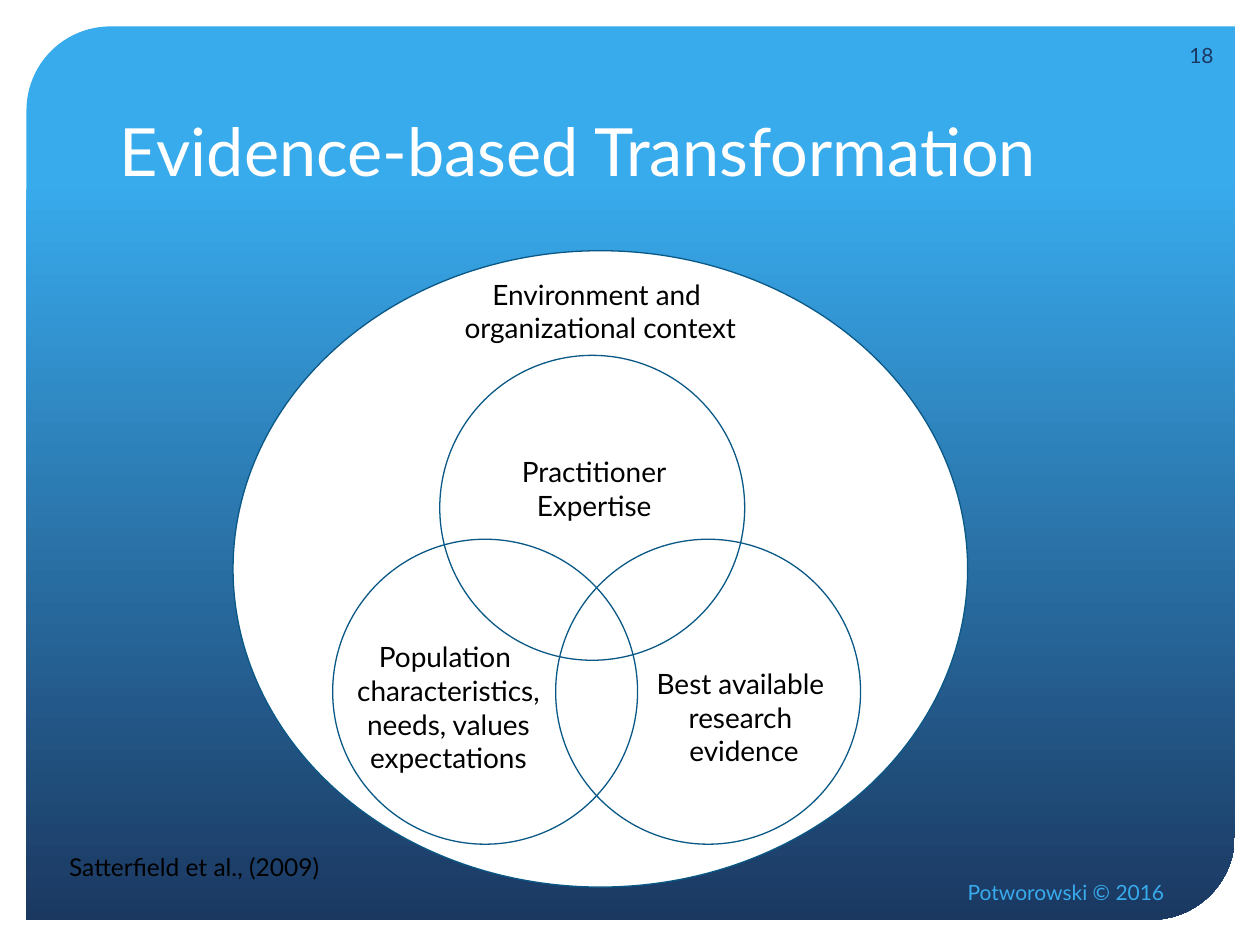
from pptx import Presentation
from pptx.dml.color import RGBColor
from pptx.enum import shapes, text
from pptx.util import Inches, Pt

THEME = {
    "font": "Lato",
    "sky": "38ABED", "navy": "1B3861", "outline": "095886",
    "white": "FFFFFF", "black": "000000",
    "title": 38, "label": 16, "source": 14, "small": 12, "line": 0.75,
}

TITLE = ("Evidence-based Transformation", (0.85, 0.42, 8.29, 1.14))
PANEL = (0.21, 0.21, 9.59, 7.09)
CONTEXT = (1.85, 1.99, 5.83, 5.05)
CIRCLE_SIZE = 2.42
CIRCLES = [(3.49, 2.82), (2.64, 4.28), (4.41, 4.28)]
LABELS = [
    ("Environment and \norganizational context", (3.53, 2.15, 2.47, 0.64)),
    ("Practitioner\vExpertise", (4.02, 3.56, 1.39, 0.64)),
    ("Population \ncharacteristics,\vneeds, values\nexpectations", (2.68, 5.03, 1.76, 1.18)),
    ("Best available \nresearch \nevidence", (5.1, 5.24, 1.61, 0.91)),
]
SOURCE = ("Satterfield et al., (2009)", (0.45, 6.71, 2.37, 0.34))
FOOTERS = [
    ("Potworowski © 2016", (3.61, 6.88, 5.73, 0.4), "sky"),
    ("18", (9.19, 0.24, 0.54, 0.4), "navy"),
]


def color(name):
    return RGBColor.from_string(THEME[name])


def inches(area):
    return [Inches(length) for length in area]


def write(box, words, size, ink, align, anchor):
    frame = box.text_frame
    frame.text = words
    frame.vertical_anchor = anchor
    for para in frame.paragraphs:
        para.alignment = align
        for span in para.runs:
            span.font.name = THEME["font"]
            span.font.size = Pt(THEME[size])
            span.font.color.rgb = color(ink)
    return frame


def add_text(page, words, area, size, ink, align, anchor=text.MSO_ANCHOR.TOP):
    box = page.shapes.add_textbox(*inches(area))
    return write(box, words, size, ink, align, anchor)


def add_label(page, words, area, size, align):
    frame = add_text(page, words, area, size, "black", align)
    frame.word_wrap = False
    frame.auto_size = text.MSO_AUTO_SIZE.SHAPE_TO_FIT_TEXT


def add_panel(page):
    panel = page.shapes.add_shape(shapes.MSO_SHAPE.ROUND_2_DIAG_RECTANGLE, *inches(PANEL))
    panel.shadow.inherit = False
    panel.adjustments[0] = 0.094
    panel.adjustments[1] = 0
    panel.line.fill.background()
    panel.fill.gradient()
    panel.fill.gradient_angle = 270
    stops = [(0.17, "sky"), (1, "navy")]
    for stop, (position, name) in zip(panel.fill.gradient_stops, stops):
        stop.position = position
        stop.color.rgb = color(name)
    page.shapes._spTree.insert(2, panel._element)


def add_ellipse(page, area, fill=None):
    ellipse = page.shapes.add_shape(shapes.MSO_SHAPE.OVAL, *inches(area))
    ellipse.shadow.inherit = False
    if fill:
        ellipse.fill.solid()
        ellipse.fill.fore_color.rgb = color(fill)
    else:
        ellipse.fill.background()
    ellipse.line.color.rgb = color("outline")
    ellipse.line.width = Pt(THEME["line"])


def main():
    deck = Presentation()
    deck.slide_width, deck.slide_height = Inches(10), Inches(7.5)
    page = deck.slides.add_slide(deck.slide_layouts[5])
    left, center, right = text.PP_ALIGN.LEFT, text.PP_ALIGN.CENTER, text.PP_ALIGN.RIGHT

    add_panel(page)
    title = page.shapes.title
    words, area = TITLE
    title.left, title.top, title.width, title.height = inches(area)
    write(title, words, "title", "white", left, text.MSO_ANCHOR.BOTTOM)

    for words, area, ink in FOOTERS:
        frame = add_text(page, words, area, "small", ink, right, text.MSO_ANCHOR.MIDDLE)
        frame.word_wrap = True

    add_ellipse(page, CONTEXT, "white")
    for x, y in CIRCLES:
        add_ellipse(page, (x, y, CIRCLE_SIZE, CIRCLE_SIZE))

    for words, area in LABELS:
        add_label(page, words, area, "label", center)
    add_label(page, *SOURCE, "source", left)

    deck.save("out.pptx")


if __name__ == "__main__":
    main()
